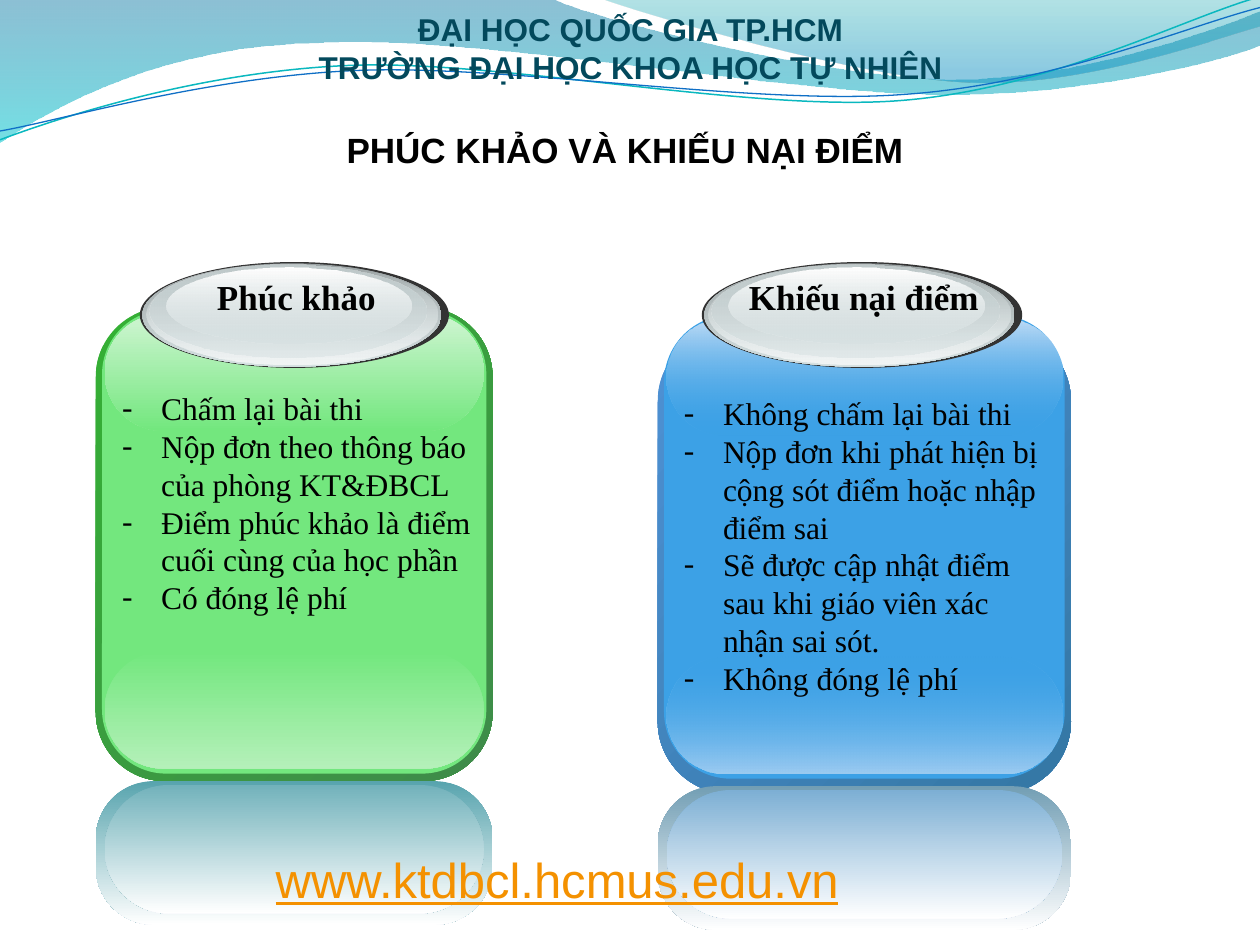
"""Build the slide on grade reviews and grade complaints."""
from dataclasses import dataclass

from lxml.etree import SubElement
from pptx import Presentation
from pptx.dml.color import RGBColor
from pptx.enum.shapes import MSO_SHAPE
from pptx.enum.text import MSO_ANCHOR, MSO_AUTO_SIZE, PP_ALIGN
from pptx.oxml.ns import qn
from pptx.util import Inches, Pt


@dataclass(frozen=True)
class Theme:
    """Hold the fonts, type sizes and shared colours."""
    sans: str = "Arial"
    serif: str = "Times New Roman"
    body: int = 18
    head: int = 20
    link: int = 28
    ink: str = "000000"
    navy: str = "03495C"
    orange: str = "F49100"
    white: str = "FFFFFF"
    rim: str = "333333"
    teal: str = "0AB8BF"
    blue: str = "0F6FC6"
    left_wave: tuple = (("0074A1", 45), ("00C6CF", 55))
    right_wave: tuple = (("00A1A9", 30), ("008BBF", 45))
    metal: tuple = (
        (("99A1A2", 100), ("D6E1E2", 100)),
        (("D6E1E2", 0), ("F2F5F5", 100)),
        (("C1CBCC", 100), ("D6E1E2", 48)),
        (("FFFFFF", 100), ("D6E1E2", 38)),
    )


@dataclass(frozen=True)
class Tint:
    """Hold the colours of one card."""
    back: tuple
    face: str
    top: str
    foot: str
    clear: int
    outer: str
    inner: str


THEME = Theme()
GREEN = Tint(("34B034", "3F8B4A"), "73E77E", "CFF5D2", "B4F0B9", 100, "58A4AE", "72B2BB")
BLUE = Tint(("4E91D4", "3477A4"), "3CA1E6", "C0DCF6", "9CCBF1", 0, "729EB4", "7DAFD4")


def paint(shape, paint_as, angle=90, end=100):
    """Fill a shape with one colour or a pair of (colour, opacity) stops."""
    shape.shadow.inherit = False
    shape.line.fill.background()
    if isinstance(paint_as, str):
        shape.fill.solid()
        shape.fill.fore_color.rgb = RGBColor.from_string(paint_as)
        return
    shape.fill.gradient()
    shape.fill.gradient_angle = 360 - angle
    for stop, place, (color, _) in zip(shape.fill.gradient_stops, (0, end), paint_as):
        stop.position = place / 100
        stop.color.rgb = RGBColor.from_string(color)
    colors = shape._element.spPr.findall(".//" + qn("a:srgbClr"))
    for node, (_, alpha) in zip(colors, paint_as):
        if alpha < 100:
            SubElement(node, qn("a:alpha")).set("val", str(alpha * 1000))


def block(slide, kind, box, fill, round_by=None, angle=90):
    """Add a filled preset shape."""
    shape = slide.shapes.add_shape(kind, *map(Inches, box))
    if round_by is not None:
        shape.adjustments[0] = round_by
    paint(shape, fill, angle)
    return shape


def write(shape, text, font, size, color, align=PP_ALIGN.LEFT, bold=None, dash=False):
    """Set and format the text of a shape."""
    frame = shape.text_frame
    frame.word_wrap = True
    frame.text = text
    for para in frame.paragraphs:
        para.alignment = align
        if dash:
            props = para._p.get_or_add_pPr()
            props.set("marL", str(Inches(0.31)))
            props.set("indent", str(-Inches(0.31)))
            SubElement(props, qn("a:buFont")).set("typeface", font)
            SubElement(props, qn("a:buChar")).set("char", "-")
        for run in para.runs:
            run.font.name, run.font.size, run.font.bold = font, Pt(size), bold
            run.font.color.rgb = RGBColor.from_string(color)
    return frame


def label(slide, box, *args, **style):
    """Add a text box and return its frame."""
    return write(slide.shapes.add_textbox(*map(Inches, box)), *args, **style)


def curve(slide, box, start, parts, close):
    """Draw an outline of lines and cubic curves relative to a box."""
    flat = [start] + [part[i:i + 2] for part in parts for i in range(0, len(part), 2)]
    points = [(Inches(box[0] + x), Inches(box[1] + y)) for x, y in flat]
    maker = slide.shapes.build_freeform(*points[0], scale=1.0)
    maker.add_line_segments(points[1:], close=close)
    shape = maker.convert_to_shape()
    nodes = iter(shape._element.spPr.findall(".//" + qn("a:lnTo")))
    for part in parts:
        first, *rest = [next(nodes) for _ in range(len(part) // 2)]
        if rest:
            first.tag = qn("a:cubicBezTo")
        for node in rest:
            first.append(node[0])
            node.getparent().remove(node)
    return shape


def banner(slide, box):
    """Draw the waves, the white panel and the school name."""
    x, y, wide, high = box
    wave = curve(slide, box, (0, 0), [
        (4.4, 0), (4.76, 0.17, 6.64, 0.63, 7.58, 0.63), (8.53, 0.63, 9.58, 0.26, 10, 0.09),
        (10, 0.36), (9.83, 0.44, 8.7, 0.76, 7.46, 0.75), (6.22, 0.75, 3.82, 0.28, 2.57, 0.34),
        (1.29, 0.36, 0.46, 0.83, 0, 1.13)], True)
    paint(wave, THEME.left_wave)
    wave = curve(slide, box, (4.79, 0), [
        (5.09, 0.11, 6.82, 0.62, 7.69, 0.65), (8.56, 0.69, 9.61, 0.32, 10, 0.21), (10, 0)], True)
    paint(wave, THEME.right_wave, end=80)
    lines = (
        (THEME.teal, 0.85, (0, 1.11), [
            (0.48, 0.93, 1.58, 0.57, 2.77, 0.52), (3.95, 0.47, 5.93, 0.89, 7.13, 0.8),
            (8.33, 0.71, 9.38, 0.15, 9.98, -0.02)]),
        (THEME.blue, 0.75, (0, 1.04), [
            (0.47, 0.96, 1.64, 0.61, 2.83, 0.56), (4.03, 0.51, 5.97, 0.84, 7.17, 0.75),
            (8.36, 0.67, 9.41, 0.21, 10, 0.06)]),
    )
    for color, weight, start, parts in lines:
        line = curve(slide, box, start, parts, False)
        line.shadow.inherit = False
        line.fill.background()
        line.line.color.rgb = RGBColor.from_string(color)
        line.line.width = Pt(weight)
    block(slide, MSO_SHAPE.ROUND_2_DIAG_RECTANGLE, (x, y + 0.84, wide, 6.66), THEME.white)
    frame = label(slide, (x + 0.01, y, wide - 0.01, high),
                  "ĐẠI HỌC QUỐC GIA TP.HCM\nTRƯỜNG ĐẠI HỌC KHOA HỌC TỰ NHIÊN",
                  THEME.sans, THEME.body, THEME.navy, PP_ALIGN.CENTER, True)
    frame.vertical_anchor = MSO_ANCHOR.MIDDLE


def heading(slide, box):
    """Place the title above the panel."""
    title = slide.shapes.title
    title.left, title.top, title.width, title.height = map(Inches, box)
    frame = write(title, "PHÚC KHẢO VÀ KHIẾU NẠI ĐIỂM ", THEME.sans, THEME.head,
                  THEME.ink, PP_ALIGN.CENTER, True)
    frame.vertical_anchor = MSO_ANCHOR.TOP
    frame.auto_size = MSO_AUTO_SIZE.NONE
    slide.shapes._spTree.append(title._element)


def cap(slide, box, text, tall):
    """Draw the metal oval with its caption."""
    x, y, wide, _ = box
    block(slide, MSO_SHAPE.OVAL, box, THEME.rim)
    rings = ((0.02, 0.01, 0.08, 0.82), (0.05, 0.01, 0.14, 0.8),
             (0.08, 0.02, 0.26, 0.74), (0.21, 0.04, 0.51, 0.61))
    for (dx, dy, trim, deep), fill in zip(rings, THEME.metal):
        block(slide, MSO_SHAPE.OVAL, (x + dx, y + dy, wide - trim, deep), fill)
    label(slide, (x + 0.21, y + 0.06, wide - 0.39, tall), text, THEME.serif,
          THEME.head, THEME.ink, PP_ALIGN.CENTER, True)


def card(slide, box, tint, face, back, name, items, talls):
    """Draw a glossy card, its mirror image, cap and list."""
    x, y, wide, _ = box
    top, (drop, tall) = y + face, back
    rect = MSO_SHAPE.ROUNDED_RECTANGLE
    edge = tuple((color, 100) for color in tint.back)
    block(slide, rect, (x, top + drop, wide, tall), edge, 0.175, 45)
    block(slide, rect, (x + 0.05, top, wide - 0.1, 3.68), tint.face, 0.167)
    base = (tint.face, tint.clear)
    white = (THEME.white, 100)
    layers = (
        (0.07, 2.71, 0.93, (base, (tint.foot, 100)), 0.5),
        (0.07, 0.03, 0.93, ((tint.top, 100), base), 0.5),
        (0, 3.74, 1.14, ((tint.outer, 100), white), 0.404),
        (0.07, 3.77, 1.02, ((tint.inner, 100), white), 0.5),
    )
    for inset, down, deep, fill, bend in layers:
        block(slide, rect, (x + inset, top + down, wide - 2 * inset, deep), fill, bend)
    cap(slide, (x + 0.35, y, 0.69 * wide + 0.28, 0.84), name, talls[0])
    label(slide, (x + 0.11, top + 0.58, wide - 0.16, talls[1]), "\n".join(items),
          THEME.serif, THEME.body, THEME.ink, dash=True)


def address(slide, box):
    """Place the web address at the foot."""
    frame = label(slide, box, "www.ktdbcl.hcmus.edu.vn", THEME.sans, THEME.link, THEME.orange)
    frame.word_wrap = False
    frame.paragraphs[0].runs[0].font.underline = True


def main():
    """Build and save the slide."""
    deck = Presentation()
    deck.slide_width, deck.slide_height = Inches(10), Inches(7.5)
    slide = deck.slides.add_slide(deck.slide_layouts[5])
    banner(slide, (0, 0, 10, 0.76))
    card(slide, (5.22, 2.08, 3.28, 5.3), BLUE, 0.42, (0.11, 3.69), "Khiếu nại điểm", (
        "Không chấm lại bài thi",
        "Nộp đơn khi phát hiện bị cộng sót điểm hoặc nhập điểm sai",
        "Sẽ được cập nhật điểm sau khi giáo viên xác nhận sai sót.",
        "Không đóng lệ phí"), (0.77, 2.83))
    card(slide, (0.76, 2.08, 3.15, 5.3), GREEN, 0.38, (-0.02, 3.76), "Phúc khảo", (
        "Chấm lại bài thi",
        "Nộp đơn theo thông báo của phòng KT&ĐBCL",
        "Điểm phúc khảo là điểm cuối cùng của học phần",
        "Có đóng lệ phí"), (0.44, 1.92))
    heading(slide, (0, 0.97, 10, 0.44))
    address(slide, (2.09, 6.69, 4.73, 0.57))
    deck.save("out.pptx")


if __name__ == "__main__":
    main()
